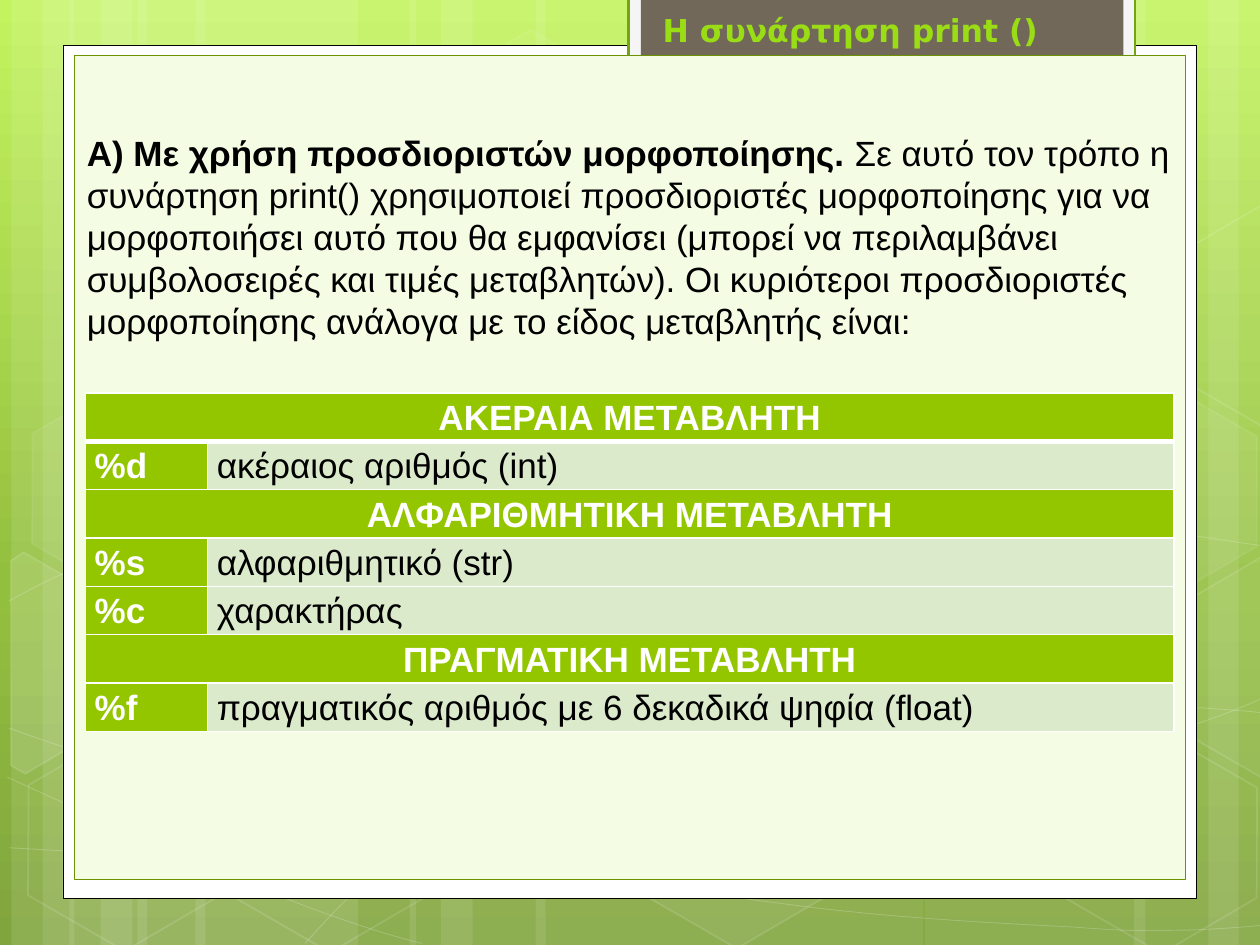
from copy import deepcopy

from lxml.etree import SubElement
from pptx import Presentation
from pptx.dml.color import RGBColor
from pptx.enum.shapes import MSO_SHAPE as Preset
from pptx.enum.text import MSO_AUTO_SIZE as AutoSize, PP_ALIGN as Align
from pptx.oxml import parse_xml
from pptx.oxml.ns import nsdecls, qn
from pptx.util import Cm, Pt

WIDTH, HEIGHT = 25.4, 19.05
WHITE, BLACK, GREEN, PALE = "FFFFFF", "000000", "94C600", "DCEACC"

BACKDROP = [(0, "C3F35F"), (62, "93BF3F"), (100, "81A53E")]

LEFT_BANDS = [(2.77, 4.45), (0.23, 1.27), (0.86, 2.11)]
BANDS = LEFT_BANDS + [(left + 1.17, width) for left, width in LEFT_BANDS]
TURNED_BANDS = [(18.64, 4.45), (24.36, 1.27), (22.86, 2.11)]
MIDDLE_BANDS = [(10.8, 7.82), (8.26, 1.27), (8.89, 2.11)]

WAVES = [
    [(0.18, 17.09), (1.55, 17.17), (2.92, 17.25), (4.83, 17.22), (6.73, 17.2),
     (9.09, 17.15), (11.63, 16.89), (14.17, 16.64), (17.78, 16.15), (20.12, 15.67),
     (22.43, 15.19), (24.82, 14.43), (25.58, 14)],
    [(0.18, 12.12), (0.91, 11.71), (1.65, 11.33), (3.07, 10.95), (4.52, 10.57),
     (6.58, 10.01), (8.81, 9.83), (11.07, 9.65), (13.82, 9.63), (16.61, 9.83),
     (19.41, 10.03), (24.05, 10.82), (25.58, 11.02)],
    [(0.15, 15.67), (3.23, 17.07), (6.27, 18.47), (8.51, 19.02)],
    [(0.18, 14.68), (0.97, 14.96), (1.78, 15.24), (3.25, 15.65), (4.72, 16.03),
     (6.93, 16.66), (9.07, 17.09), (11.18, 17.53), (13.84, 17.98), (15.95, 18.24),
     (18.06, 18.52), (20.32, 18.62), (21.67, 18.69), (23.01, 18.8), (23.34, 18.75),
     (24, 18.75), (24.66, 18.72), (25.12, 18.69), (25.58, 18.64)],
    [(6.15, 19.02), (6.6, 18.52), (7.06, 18.01), (7.67, 17.55), (8.28, 17.07),
     (9.14, 16.59), (9.86, 16.23), (10.57, 15.88), (11, 15.72), (11.91, 15.47),
     (12.85, 15.21), (14.55, 14.86), (15.44, 14.68), (16.36, 14.5), (16.48, 14.5),
     (17.27, 14.45), (18.06, 14.38), (19.3, 14.3), (20.17, 14.27), (21.06, 14.25),
     (22.5, 14.27), (22.5, 14.27), (23.07, 14.27), (23.64, 14.27), (24.21, 14.27),
     (24.66, 14.3), (25.1, 14.33), (25.55, 14.38)],
]

LEFT_HEXAGONS = [(8.48, 0.91, 4, 8), (12.62, 14.96, 6, 12)]
HEXAGONS = [
    (0.28, 15.01, 0, 12), (0.36, 7.92, 7, 8), (4.42, 15.04, 0, 12),
    (19.13, 11.51, 10, 12), (21.18, 15.06, 0, 12), (21.18, 7.98, 7, 8),
]

LEFT_EDGE = [(-0.84, 11.96), (-0.7, 11.68), (1.57, 11.68),
             (2.65, 13.61), (1.56, 15.53), (1.23, 15.53)]
RIGHT_EDGE = [(23.29, 13.21), (24.39, 11.28), (24.61, 11.28),
              (26.75, 15.02), (26.62, 15.14), (24.39, 15.14)]
UPPER_EDGE = [(x, y - 7.09) for x, y in RIGHT_EDGE]

SPECIFIERS = [
    ("ΑΚΕΡΑΙΑ ΜΕΤΑΒΛΗΤΗ",),
    ("%d", "ακέραιος αριθμός (int)"),
    ("ΑΛΦΑΡΙΘΜΗΤΙΚΗ ΜΕΤΑΒΛΗΤΗ",),
    ("%s", "αλφαριθμητικό (str)"),
    ("%c", "χαρακτήρας"),
    ("ΠΡΑΓΜΑΤΙΚΗ ΜΕΤΑΒΛΗΤΗ",),
    ("%f", "πραγματικός αριθμός με 6 δεκαδικά ψηφία (float)"),
]
INTRO = [
    ("Α) Με χρήση προσδιοριστών μορφοποίησης. ", True),
    ("Σε αυτό τον τρόπο η συνάρτηση print() χρησιμοποιεί προσδιοριστές μορφοποίησης "
     "για να μορφοποιήσει αυτό που θα εμφανίσει (μπορεί να περιλαμβάνει συμβολοσειρές "
     "και τιμές μεταβλητών). Οι κυριότεροι προσδιοριστές μορφοποίησης ανάλογα με το "
     "είδος μεταβλητής είναι:", False),
]


def color(code):
    return RGBColor.from_string(code)


def paint(fill, code, alpha=100):
    if code is None or alpha == 0:
        fill.background()
        return
    fill.solid()
    fill.fore_color.rgb = color(code)
    if alpha < 100:
        tint = fill._xPr.find(".//" + qn("a:srgbClr"))
        SubElement(tint, qn("a:alpha")).set("val", str(alpha * 1000))


class SlideMaker:
    def __init__(self, page, font="Arial", size=20):
        self.page, self.font, self.size = page, font, size

    def backdrop(self, stops):
        fill = self.page.background.fill
        fill.gradient()
        fill.gradient_angle = 270
        stop_list = self.page._element.find(".//" + qn("a:gsLst"))
        stop_list.insert(1, deepcopy(stop_list[0]))
        for stop, (place, code) in zip(fill.gradient_stops, stops):
            stop.position = place / 100
            stop.color.rgb = color(code)

    def finish(self, shape, fill, alpha, line, weight, line_alpha):
        shape.shadow.inherit = False
        paint(shape.fill, fill, alpha)
        paint(shape.line.fill, line, line_alpha)
        if line:
            shape.line.width = Pt(weight)
        return shape

    def preset(self, frame, fill, alpha=100, line=None, weight=1, line_alpha=100,
               kind=Preset.RECTANGLE):
        shape = self.page.shapes.add_shape(kind, *map(Cm, frame))
        return self.finish(shape, fill, alpha, line, weight, line_alpha)

    def bands(self, bands, angle=0):
        for left, width in bands:
            self.preset((left, 0, width, HEIGHT), WHITE, 10).rotation = angle

    def hexagon(self, left, top, alpha, line_alpha):
        shape = self.preset((left, top, 4.45, 3.86), WHITE, alpha, WHITE, 1, line_alpha,
                            Preset.HEXAGON)
        shape.adjustments[0] = 0.285
        shape.rotation = 30

    def outline(self, points, alpha=0, weight=1, line_alpha=12, close=True):
        track = [(Cm(x), Cm(y)) for x, y in points]
        builder = self.page.shapes.build_freeform(*track[0])
        builder.add_line_segments(track[1:], close=close)
        shape = builder.convert_to_shape()
        return self.finish(shape, WHITE, alpha, WHITE, weight, line_alpha)

    def cut_hexagon(self, points, alpha):
        self.outline(points, alpha).rotation = 30

    def wave(self, points):
        shape = self.outline(points, weight=0.5, line_alpha=20, close=False)
        track = shape._element.find(".//" + qn("a:path"))
        segments = track.findall(qn("a:lnTo"))
        for start in range(0, len(segments), 3):
            curve = SubElement(track, qn("a:cubicBezTo"))
            for segment in segments[start:start + 3]:
                curve.append(segment[0])
                track.remove(segment)

    def style(self, span, code, bold, font=None, size=None):
        span.font.name = font or self.font
        span.font.size = Pt(size or self.size)
        span.font.bold = bold
        span.font.color.rgb = color(code)

    def text(self, frame, spans, code, wrap=True, font=None, size=None):
        box = self.page.shapes.add_textbox(*map(Cm, frame))
        box.text_frame.word_wrap = wrap
        box.text_frame.auto_size = AutoSize.SHAPE_TO_FIT_TEXT
        para = box.text_frame.paragraphs[0]
        for words, bold in spans:
            span = para.add_run()
            span.text = words
            self.style(span, code, bold, font, size)

    def cell(self, cell, words, fill, code, bold, weights):
        cell.margin_left = cell.margin_right = Cm(0.19)
        cell.margin_top = cell.margin_bottom = 0
        cell.text_frame.text = words
        para = cell.text_frame.paragraphs[0]
        para.line_spacing, para.space_after = 1.15, Pt(6)
        self.style(para.runs[0], code, bold)
        self.border(cell, fill, weights)
        return para

    def border(self, cell, fill, weights):
        paint(cell.fill, fill)
        for index, (side, weight) in enumerate(zip("LRTB", weights)):
            cell._tc.get_or_add_tcPr().insert(index, parse_xml(
                f'<a:ln{side} {nsdecls("a")} w="{Pt(weight)}"><a:solidFill>'
                f'<a:srgbClr val="{WHITE}"/></a:solidFill></a:ln{side}>'))

    def table(self, frame, widths, height, rows):
        table = self.page.shapes.add_table(len(rows), len(widths), *map(Cm, frame)).table
        table.first_row = table.horz_banding = False
        for column, width in zip(table.columns, widths):
            column.width = Cm(width)
        for index, row in enumerate(rows):
            table.rows[index].height = Cm(height)
            weights = (1, 1, 3 if index == 1 else 1, 3 if index == 0 else 1)
            first, second = table.cell(index, 0), table.cell(index, 1)
            para = self.cell(first, row[0], GREEN, WHITE, True, weights)
            if len(row) == 1:
                self.border(second, GREEN, weights)
                first.merge(second)
                para.alignment = Align.CENTER
            else:
                self.cell(second, row[1], PALE, BLACK, False, weights)


def main():
    deck = Presentation()
    deck.slide_width, deck.slide_height = Cm(WIDTH), Cm(HEIGHT)
    maker = SlideMaker(deck.slides.add_slide(deck.slide_layouts[6]))
    maker.backdrop(BACKDROP)
    maker.bands(BANDS)
    maker.bands(TURNED_BANDS, 180)
    maker.bands(MIDDLE_BANDS)
    for wave in WAVES:
        maker.wave(wave)
    for hexagon in LEFT_HEXAGONS:
        maker.hexagon(*hexagon)
    maker.cut_hexagon(LEFT_EDGE, 10)
    for hexagon in HEXAGONS:
        maker.hexagon(*hexagon)
    maker.cut_hexagon(RIGHT_EDGE, 4)
    maker.cut_hexagon(UPPER_EDGE, 0)
    maker.preset((1.27, 0.91, 22.86, 17.2), WHITE, line=BLACK, weight=0.5)
    maker.preset((12.67, -0.05, 10.22, 1.96), "F5F5F5", line="74A510", weight=1.25)
    maker.preset((12.92, -0.05, 9.73, 1.73), "71685A")
    maker.preset((1.5, 1.12, 22.4, 16.61), "F4FCE4", line="6D9200", weight=0.75)
    maker.text((1.5, 2.53, 22.61, 4.52), INTRO, BLACK)
    maker.text((13.11, 0.09, 8.1, 1.02), [("Η συνάρτηση print ()", True)], "9ADD15",
               wrap=False, font="DejaVu Sans", size=18)
    maker.table((1.72, 7.92, 21.95, 6.8), (2.46, 19.49), 0.84, SPECIFIERS)
    deck.save("out.pptx")


if __name__ == "__main__":
    main()
